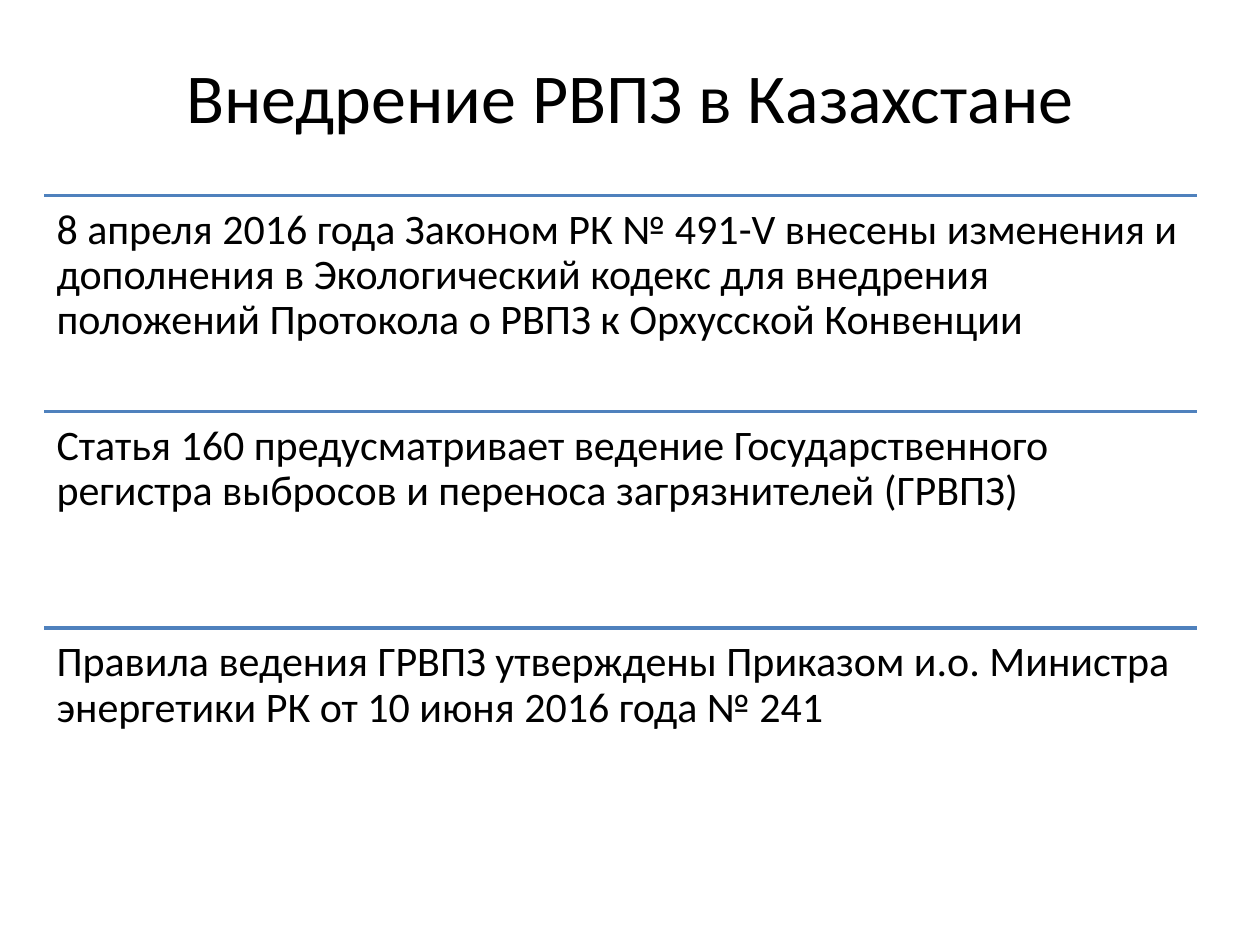
import pptx
import pptx.dml.color
import pptx.enum.text
import pptx.oxml.ns
import pptx.util
from lxml import etree

Inches = pptx.util.Inches
Pt = pptx.util.Pt
Align = pptx.enum.text.PP_ALIGN
Anchor = pptx.enum.text.MSO_ANCHOR

COLORS = {"background": "FFFFFF", "text": "000000", "rule": "4F81BD"}
FONT = "Calibri"
TITLE = "Внедрение РВПЗ в Казахстане"
PROVISIONS = [
    "8 апреля 2016 года Законом РК № 491-V внесены изменения и дополнения "
    "в Экологический кодекс для внедрения положений Протокола о РВПЗ "
    "к Орхусской Конвенции",
    "Статья 160 предусматривает ведение Государственного регистра выбросов "
    "и переноса загрязнителей (ГРВПЗ)",
    "Правила ведения ГРВПЗ утверждены Приказом и.о. Министра энергетики РК "
    "от 10 июня 2016 года № 241",
]


def rgb(name):
    return pptx.dml.color.RGBColor.from_string(COLORS[name])


def write_text(frame, text, *, size, align=Align.LEFT, anchor=Anchor.TOP,
               spacing=1.0, inset=0.1, inset_y=0.05):
    frame.word_wrap = True
    frame.auto_size = pptx.enum.text.MSO_AUTO_SIZE.NONE
    frame.vertical_anchor = anchor
    frame.margin_left = frame.margin_right = Inches(inset)
    frame.margin_top = frame.margin_bottom = Inches(inset_y)
    paragraph = frame.paragraphs[0]
    paragraph.alignment = align
    paragraph.line_spacing = spacing
    run = paragraph.add_run()
    run.text = text
    run.font.name = FONT
    run.font.size = Pt(size)
    run.font.color.rgb = rgb("text")


def place_heading(slide, left, top, width, height):
    heading = slide.shapes.title
    heading.left, heading.top = Inches(left), Inches(top)
    heading.width, heading.height = Inches(width), Inches(height)
    write_text(heading.text_frame, TITLE, size=40, align=Align.CENTER,
               anchor=Anchor.MIDDLE)


def add_rule(shapes, left, top, width):
    rule = shapes.add_connector(
        pptx.enum.shapes.MSO_CONNECTOR.STRAIGHT,
        Inches(left), Inches(top), Inches(left + width), Inches(top))
    rule.line.color.rgb = rgb("rule")
    rule.line.width = Pt(2)
    etree.SubElement(rule._element.spPr, pptx.oxml.ns.qn("a:effectLst"))


def place_provisions(slide, left, top, width, height):
    group = slide.shapes.add_group_shape()
    row_height = height / len(PROVISIONS)
    for index, provision in enumerate(PROVISIONS):
        row_top = top + index * row_height
        add_rule(group.shapes, left, row_top, width)
        statement = group.shapes.add_textbox(
            Inches(left), Inches(row_top), Inches(width), Inches(row_height))
        write_text(statement.text_frame, provision, size=24, spacing=0.9,
                   inset_y=0.1)


def main():
    deck = pptx.Presentation()
    deck.slide_width, deck.slide_height = Inches(10), Inches(7.5)
    slide = deck.slides.add_slide(deck.slide_layouts.get_by_name("Title Only"))
    slide.background.fill.solid()
    slide.background.fill.fore_color.rgb = rgb("background")
    place_heading(slide, 0.5, 0.13, 9, 1.25)
    place_provisions(slide, 0.35, 1.55, 9.15, 5.15)
    deck.save("out.pptx")


if __name__ == "__main__":
    import pptx.enum.shapes
    main()
